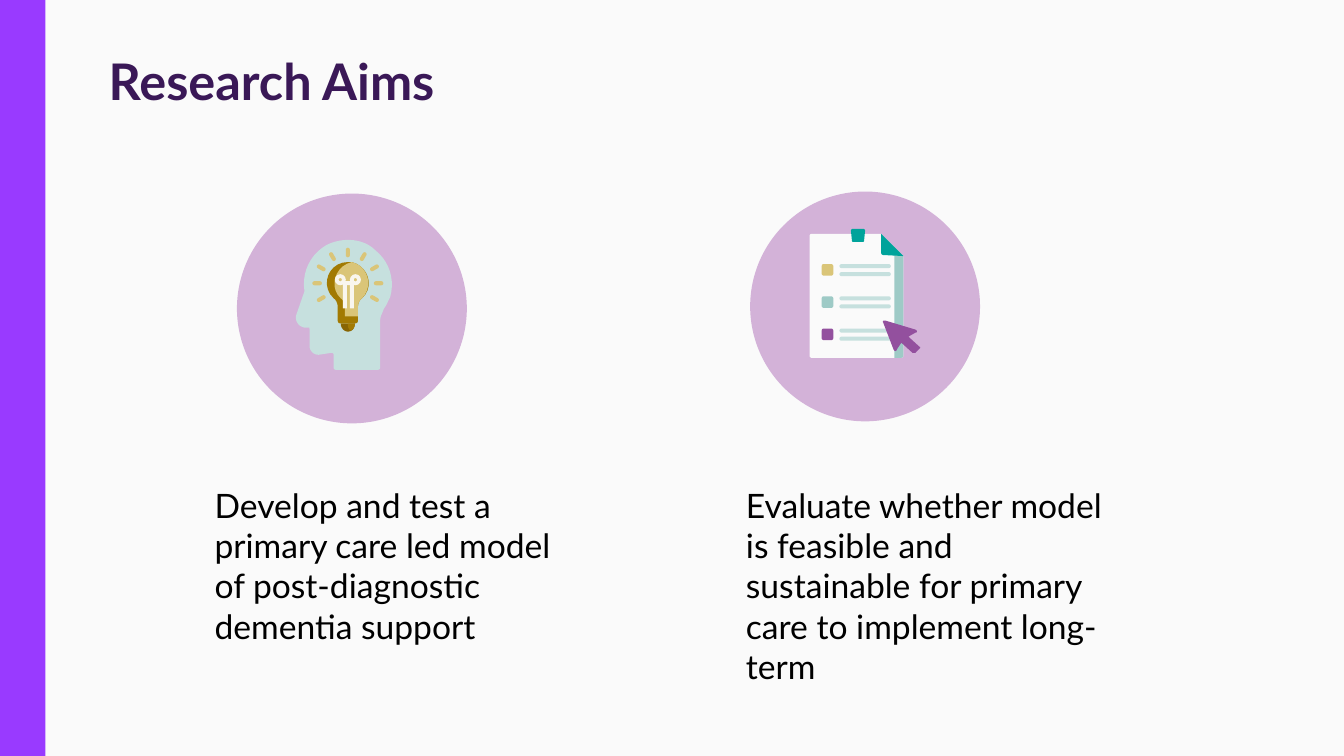
import pptx
import pptx.dml.color
import pptx.enum.shapes
import pptx.util

RGBColor = pptx.dml.color.RGBColor
BACKGROUND = RGBColor(0xFA, 0xFA, 0xFA)
VIOLET = RGBColor(0x99, 0x3A, 0xFF)
TITLE_PURPLE = RGBColor(0x3A, 0x18, 0x57)
BLACK = RGBColor(0x00, 0x00, 0x00)
LILAC = RGBColor(0xD3, 0xB2, 0xD8)
PLUM = RGBColor(0x93, 0x50, 0x9E)
PALE_TEAL = RGBColor(0xC6, 0xE0, 0xDE)
SOFT_TEAL = RGBColor(0x9E, 0xCA, 0xC6)
TEAL = RGBColor(0x00, 0xA3, 0x9B)
GOLD = RGBColor(0xDA, 0xC5, 0x78)
BRONZE = RGBColor(0xA2, 0x7A, 0x02)
DARK_BRONZE = RGBColor(0x88, 0x65, 0x02)
CREAM = RGBColor(0xF9, 0xF6, 0xEE)

PRESET = pptx.enum.shapes.MSO_SHAPE
CELL = pptx.util.Inches(0.01)
COLUMNS, ROWS = 1333, 750
CURVE_STEPS = 10

presentation = pptx.Presentation()
presentation.slide_width = COLUMNS * CELL
presentation.slide_height = ROWS * CELL
slide = presentation.slides.add_slide(presentation.slide_layouts[6])
slide.background.fill.solid()
slide.background.fill.fore_color.rgb = BACKGROUND


def add_text(text, left, top, width, height, size, colour, bold=False):
    box = slide.shapes.add_textbox(left * CELL, top * CELL, width * CELL, height * CELL)
    box.text_frame.word_wrap = True
    paragraph = box.text_frame.paragraphs[0]
    paragraph.text = text
    font = paragraph.runs[0].font
    font.name, font.size, font.bold = "Lato", pptx.util.Pt(size), bold
    font.color.rgb = colour


def add_filled(colour, form, box=None, adjustment=None, rotation=0):
    """Draw a preset in box, or a closed outline from a list of points and Bezier triples."""
    if isinstance(form, list):
        points = [form[0]]
        for step in form[1:]:
            if len(step) == 2:
                points.append(step)
                continue
            x0, y0 = points[-1]
            x1, y1, x2, y2, x3, y3 = step
            for index in range(1, CURVE_STEPS + 1):
                t = index / CURVE_STEPS
                a, b, c, d = (1 - t) ** 3, 3 * t * (1 - t) ** 2, 3 * t * t * (1 - t), t ** 3
                points.append((a * x0 + b * x1 + c * x2 + d * x3,
                               a * y0 + b * y1 + c * y2 + d * y3))
        points = [(x * CELL, y * CELL) for x, y in points]
        builder = slide.shapes.build_freeform(*points[0])
        builder.add_line_segments(points[1:], close=True)
        shape = builder.convert_to_shape()
    else:
        shape = slide.shapes.add_shape(form, *(int(length * CELL) for length in box))
        shape.rotation = rotation
        if adjustment is not None:
            shape.adjustments[0] = adjustment
    shape.shadow.inherit = False
    shape.fill.solid()
    shape.fill.fore_color.rgb = colour
    shape.line.fill.background()


add_filled(VIOLET, PRESET.RECTANGLE, (0, 0, 45, ROWS))
add_text("Research Aims", 98, 45, 1013, 136, 36, TITLE_PURPLE, bold=True)
for left, aim in (
    (203, "Develop and test a primary care led model of post-diagnostic dementia support"),
    (730, "Evaluate whether model is feasible and sustainable for primary care to implement long-term"),
):
    add_text(aim, left, 476, 379, 110, 24, BLACK)

# Head with a light bulb
add_filled(LILAC, PRESET.OVAL, (235, 192, 228, 228))
head = [
    (345, 238), (338, 238, 330, 240, 324, 243), (308, 252, 299, 270, 302, 289),
    (294, 312), (292, 318, 296, 324, 302, 325), (306, 325), (307, 325, 307, 325, 307, 327),
    (307, 343), (307, 348, 311, 352, 316, 352), (329, 350), (330, 350, 331, 351, 331, 352),
    (331, 365), (331, 366, 332, 367, 334, 367), (374, 367), (376, 367, 377, 366, 377, 365),
    (377, 322), (377, 319, 377, 316, 378, 313), (379, 311, 380, 308, 381, 306),
    (384, 302, 385, 298, 387, 295), (392, 277, 386, 259, 372, 248),
    (365, 241, 355, 238, 345, 238),
]
bulb_tip = [(338, 321), (338, 326, 342, 329, 345, 329), (349, 329, 352, 326, 352, 321)]
bulb_tip_light = [(345, 321), (345, 325, 346, 327, 348, 328), (350, 327, 352, 325, 352, 321)]
bulb = [
    (345, 260), (326, 260, 317, 283, 331, 296), (334, 298, 335, 302, 335, 305),
    (335, 318), (335, 320, 336, 321, 339, 321), (351, 321), (354, 321, 355, 320, 355, 318),
    (355, 305), (355, 302, 356, 298, 359, 296), (372, 284, 365, 264, 349, 260),
]
bulb_light = [
    (349, 260), (332, 264, 326, 285, 338, 296), (341, 298, 342, 302, 342, 305),
    (342, 314), (355, 314), (355, 305), (355, 302, 356, 298, 359, 296),
    (371, 284, 365, 264, 349, 260),
]
for colour, outline in ((PALE_TEAL, head), (DARK_BRONZE, bulb_tip), (BRONZE, bulb_tip_light),
                        (BRONZE, bulb), (GOLD, bulb_light)):
    add_filled(colour, outline)

for loop_left, wire_left in ((332, 340), (347, 347)):
    add_filled(CREAM, PRESET.DONUT, (loop_left, 272, 11, 11), adjustment=0.35)
    add_filled(CREAM, PRESET.RECTANGLE, (wire_left, 279, 4, 27))
add_filled(CREAM, PRESET.RECTANGLE, (340, 279, 11, 4))

for ray in range(9):
    # Rays fan out from the bulb, one every 30 degrees
    angle = 150 + 30 * ray
    direction = pptx.util.math.radians(angle) if hasattr(pptx.util, "math") else angle * 3.14159 / 180
    unit = complex(2.71828 ** (1j * direction))
    x, y = 345 + 30.5 * unit.real, 281 + 30.5 * unit.imag
    add_filled(GOLD, PRESET.ROUNDED_RECTANGLE, (x - 4.75, y - 2, 9.5, 4), 0.5, angle)

# Checklist with a cursor
add_filled(LILAC, PRESET.OVAL, (744, 190, 228, 228))
page = [
    (805, 232), (804, 232, 803, 233, 803, 234), (803, 353), (803, 354, 804, 355, 805, 355),
    (894, 355), (895, 355, 896, 354, 896, 353), (896, 254), (874, 232),
]
page_edge = [(887, 245), (887, 355), (894, 355), (895, 355, 896, 354, 896, 353), (896, 254)]
page_fold = [(874, 232), (874, 251), (874, 252, 875, 253, 876, 253), (896, 254)]
clip = [
    (846, 227), (845, 227, 844, 228, 844, 229), (845, 239), (845, 240, 846, 240, 847, 240),
    (855, 240), (856, 240, 857, 240, 857, 239), (858, 229), (858, 228, 857, 227, 856, 227),
]
cursor = [
    (877, 318), (876, 318, 875, 319, 876, 320), (886, 346), (887, 349, 889, 349, 890, 346),
    (894, 340), (905, 350), (906, 350, 907, 350, 908, 350), (912, 346),
    (913, 345, 913, 344, 912, 344), (901, 334), (908, 330), (910, 330, 910, 328, 908, 327),
    (878, 318),
]
for colour, outline in ((BACKGROUND, page), (SOFT_TEAL, page_edge), (TEAL, page_fold)):
    add_filled(colour, outline)
for row, colour in enumerate((GOLD, SOFT_TEAL, PLUM)):
    top = 262 + 32 * row
    for line_top in (top, top + 8):
        add_filled(PALE_TEAL, PRESET.ROUNDED_RECTANGLE, (832.5, line_top, 51, 4), 0.5)
    add_filled(colour, PRESET.ROUNDED_RECTANGLE, (815, top, 11.5, 11.5), 0.17)
add_filled(TEAL, clip)
add_filled(PLUM, cursor)

presentation.save("out.pptx")
